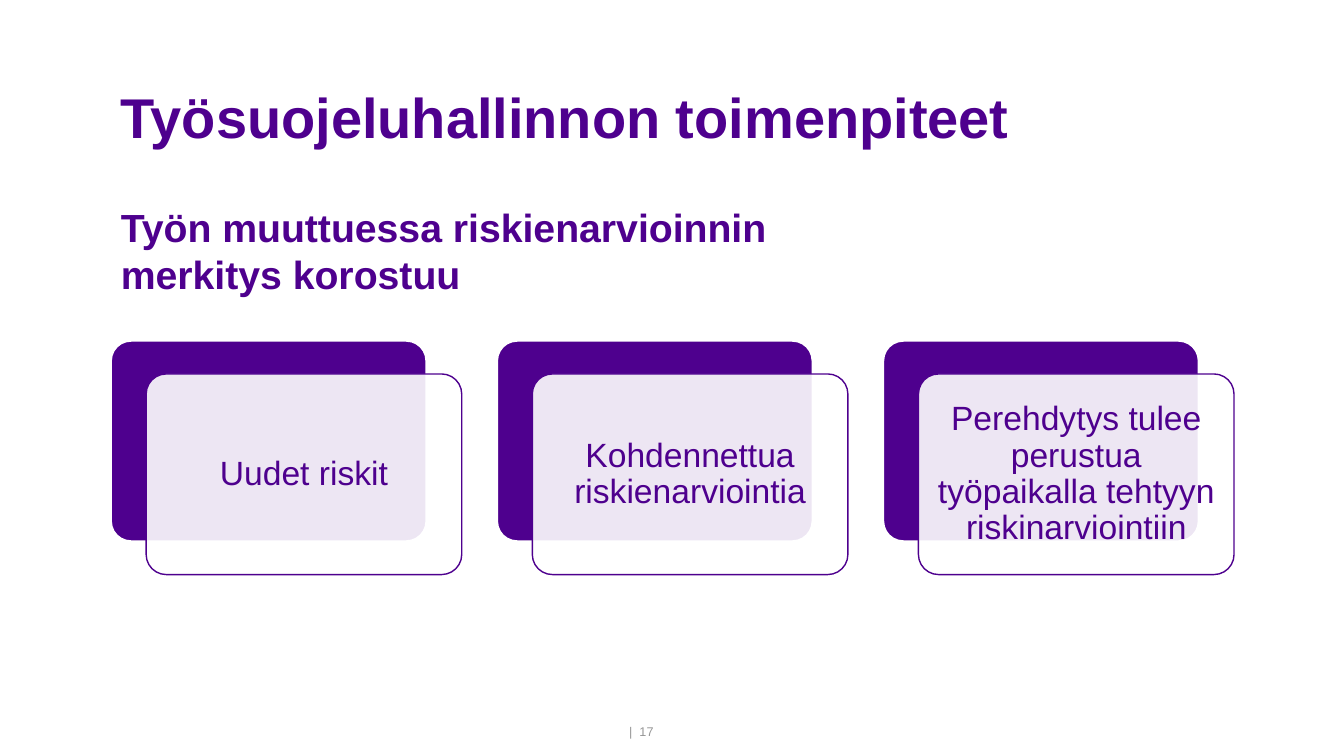
import pptx
import pptx.util
import pptx.dml.color
import pptx.enum.shapes
import pptx.enum.text
import pptx.oxml
import pptx.oxml.ns

Inches = pptx.util.Inches
Align = pptx.enum.text.PP_ALIGN
Anchor = pptx.enum.text.MSO_ANCHOR

PURPLE, WHITE, GRAY = "4E008E", "FFFFFF", "969696"
MEASURES = ["Uudet riskit", "Kohdennettua riskienarviointia",
            "Perehdytys tulee perustua työpaikalla tehtyyn riskinarviointiin"]
CARD_LEFT, CARD_TOP, CARD_STEP = 1.1, 3.38, 3.83
CARD_WIDTH, CARD_HEIGHT = 3.13, 1.99
OFFSET_X, OFFSET_Y = 0.35, 0.33


def color(value):
    return pptx.dml.color.RGBColor.from_string(value)


def assign(target, values):
    for name, value in values.items():
        setattr(target, name, value)


class Page:
    def __init__(self, deck, font="Arial"):
        self.slide = deck.slides.add_slide(deck.slide_layouts[6])
        self.font = font

    def fill_text(self, shape, text, size, ink=PURPLE, bold=False, frame=None, para=None):
        """Fill a shape with one styled paragraph."""
        assign(shape.text_frame, {"word_wrap": True, **(frame or {})})
        paragraph = shape.text_frame.paragraphs[0]
        assign(paragraph, para or {})
        span = paragraph.add_run()
        span.text = text
        assign(span.font, {"name": self.font, "size": pptx.util.Pt(size), "bold": bold})
        span.font.color.rgb = color(ink)

    def text(self, place, text, size, **style):
        box = self.slide.shapes.add_textbox(*map(Inches, place))
        self.fill_text(box, text, size, **style)

    def card(self, left, top, fill, line, weight, opacity=100):
        card = self.slide.shapes.add_shape(
            pptx.enum.shapes.MSO_SHAPE.ROUNDED_RECTANGLE,
            *map(Inches, (left, top, CARD_WIDTH, CARD_HEIGHT)))
        card.shadow.inherit = False
        card.adjustments[0] = 0.1
        card.fill.solid()
        card.fill.fore_color.rgb = color(fill)
        card.line.color.rgb = color(line)
        card.line.width = pptx.util.Pt(weight)
        if opacity < 100:
            tint = card.element.spPr.find("/".join(
                map(pptx.oxml.ns.qn, ("a:solidFill", "a:srgbClr"))))
            tint.append(pptx.oxml.parse_xml(
                f'<a:alpha {pptx.oxml.ns.nsdecls("a")} val="{opacity * 1000}"/>'))
        return card

    def measure(self, left, text):
        """Draw a solid card with a translucent text card offset over it."""
        self.card(left, CARD_TOP, PURPLE, WHITE, 1.5)
        front = self.card(left + OFFSET_X, CARD_TOP + OFFSET_Y, WHITE, PURPLE, 1, opacity=90)
        margins = {f"margin_{side}": Inches(0.1) for side in ("left", "top", "right", "bottom")}
        self.fill_text(front, text, 24, frame={"vertical_anchor": Anchor.MIDDLE, **margins},
                       para={"alignment": Align.CENTER, "line_spacing": 0.9})


def main():
    deck = pptx.Presentation()
    assign(deck, {"slide_width": Inches(13.33), "slide_height": Inches(7.5)})
    page = Page(deck)
    page.text((1.1, 0.3, 11.13, 1.24), "Työsuojeluhallinnon toimenpiteet", 40, bold=True,
              frame={"vertical_anchor": Anchor.BOTTOM}, para={"line_spacing": 0.9})
    page.text((5.9, 7.14, 0.68, 0.24), "|  17", 9, ink=GRAY,
              frame={"vertical_anchor": Anchor.BOTTOM, "margin_left": 0},
              para={"alignment": Align.RIGHT, "line_spacing": 0.9})
    for index, text in enumerate(MEASURES):
        page.measure(CARD_LEFT + index * CARD_STEP, text)
    page.text((1.1, 1.97, 7.12, 1.35), "Työn muuttuessa riskienarvioinnin merkitys korostuu",
              28, bold=True)
    deck.save("out.pptx")


if __name__ == "__main__":
    main()
